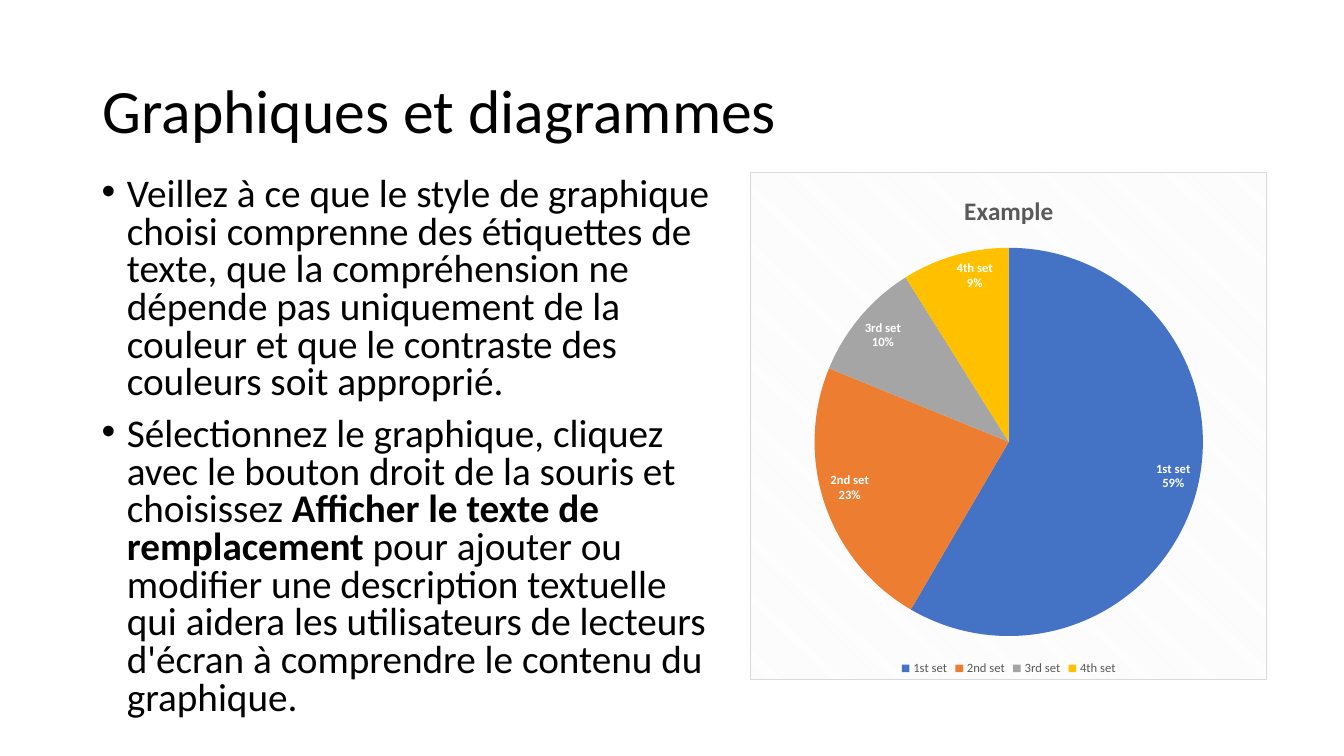
from dataclasses import dataclass

from lxml import etree
from pptx import Presentation
from pptx.chart.data import CategoryChartData
from pptx.dml.color import RGBColor
from pptx.enum.chart import XL_CHART_TYPE as ChartType
from pptx.enum.chart import XL_LABEL_POSITION as LabelPosition
from pptx.enum.chart import XL_LEGEND_POSITION as LegendPosition
from pptx.enum.text import MSO_ANCHOR as Anchor
from pptx.oxml import parse_xml
from pptx.oxml.ns import nsdecls, qn
from pptx.util import Inches, Pt


@dataclass(frozen=True)
class Theme:
    """Colours, typeface and type sizes of the slide."""

    font: str = "Calibri"
    text: str = "000000"
    muted: str = "595959"
    light: str = "FFFFFF"
    hatch: str = "F2F2F2"
    border: str = "D9D9D9"
    slices: tuple = ("4472C4", "ED7D31", "A5A5A5", "FFC000")
    title_size: int = 44
    body_size: int = 28
    chart_title_size: int = 18
    chart_size: int = 10
    label_size: int = 9


THEME = Theme()

TITLE = "Graphiques et diagrammes"
ADVICE = [
    [
        ("Veillez à ce que le style de graphique choisi comprenne des étiquettes "
         "de texte, que la compréhension ne dépende pas uniquement de la couleur "
         "et que le contraste des couleurs soit approprié.", False),
    ],
    [
        ("Sélectionnez le graphique, cliquez avec le bouton droit de la souris "
         "et choisissez ", False),
        ("Afficher le texte de remplacement ", True),
        ("pour ajouter ou modifier une description textuelle qui aidera les "
         "utilisateurs de lecteurs d'écran à comprendre le contenu du graphique.",
         False),
    ],
]
SHARES = {"1st set": 59, "2nd set": 23, "3rd set": 10, "4th set": 9}


def set_attributes(target, values):
    """Set each named attribute on the target."""
    for name, value in values.items():
        setattr(target, name, value)


def style_font(font, size, color, bold=False):
    """Apply the theme typeface with a size, colour and weight."""
    set_attributes(font, {"name": THEME.font, "size": Pt(size), "bold": bold})
    font.color.rgb = RGBColor.from_string(color)


def add_text(slide, box, paragraphs, size, anchor, paragraph_format, bulleted=False):
    """Add a wrapped text box made of paragraphs of (text, bold) runs."""
    frame = slide.shapes.add_textbox(*map(Inches, box)).text_frame
    set_attributes(frame, {"word_wrap": True, "vertical_anchor": anchor})
    for index, runs in enumerate(paragraphs):
        paragraph = frame.add_paragraph() if index else frame.paragraphs[0]
        set_attributes(paragraph, paragraph_format)
        if bulleted:
            add_bullet(paragraph)
        for text, bold in runs:
            run = paragraph.add_run()
            run.text = text
            style_font(run.font, size, THEME.text, bold)


def add_bullet(paragraph):
    """Give a paragraph a round bullet with a hanging indent."""
    properties = paragraph._p.get_or_add_pPr()
    properties.set("marL", str(Inches(0.25)))
    properties.set("indent", str(-Inches(0.25)))
    etree.SubElement(properties, qn("a:buFont")).set("typeface", "Arial")
    etree.SubElement(properties, qn("a:buChar")).set("char", "•")


def add_pie(slide, box, title, shares):
    """Add a titled pie chart with labelled slices and a legend."""
    data = CategoryChartData()
    data.categories = list(shares)
    data.add_series("Series 1", list(shares.values()))
    chart = slide.shapes.add_chart(ChartType.PIE, *map(Inches, box), data).chart
    style_font(chart.font, THEME.chart_size, THEME.text)
    set_attributes(chart, {"has_title": True, "has_legend": True})

    heading = chart.chart_title.text_frame
    heading.text = title
    style_font(heading.paragraphs[0].runs[0].font,
               THEME.chart_title_size, THEME.muted, True)

    set_attributes(chart.legend, {"position": LegendPosition.BOTTOM,
                                  "include_in_layout": False})
    style_font(chart.legend.font, THEME.label_size, THEME.muted)

    plot = chart.plots[0]
    plot.vary_by_categories = True
    for index, color in enumerate(THEME.slices):
        fill = plot.series[0].points[index].format.fill
        fill.solid()
        fill.fore_color.rgb = RGBColor.from_string(color)
    label_slices(plot.series[0].data_labels)
    hatch_chart_area(chart)


def label_slices(labels):
    """Show the category above its share inside the outer edge."""
    set_attributes(labels, {
        "show_category_name": True,
        "show_value": True,
        "show_percentage": False,
        "number_format": '0"%"',
        "number_format_is_linked": False,
        "position": LabelPosition.INSIDE_END,
    })
    style_font(labels.font, THEME.label_size, THEME.light, True)
    separator = etree.Element(qn("c:separator"))
    separator.text = "\n"
    labels._element.find(qn("c:showBubbleSize")).addnext(separator)


def hatch_chart_area(chart):
    """Fill the chart area with a diagonal pattern inside a thin border."""
    area = parse_xml(
        f'<c:spPr {nsdecls("c", "a")}><a:pattFill prst="dkDnDiag">'
        f'<a:fgClr><a:srgbClr val="{THEME.hatch}"/></a:fgClr>'
        f'<a:bgClr><a:srgbClr val="{THEME.light}"/></a:bgClr></a:pattFill>'
        f'<a:ln w="{Pt(0.75)}"><a:solidFill><a:srgbClr val="{THEME.border}"/>'
        f'</a:solidFill></a:ln></c:spPr>'
    )
    chart._chartSpace.find(qn("c:chart")).addnext(area)


def main():
    """Build the slide and save it."""
    presentation = Presentation()
    set_attributes(presentation, {"slide_width": Inches(13.33),
                                  "slide_height": Inches(7.5)})
    slide = presentation.slides.add_slide(presentation.slide_layouts[6])
    add_text(slide, (0.92, 0.4, 11.5, 1.45), [[(TITLE, False)]],
             THEME.title_size, Anchor.MIDDLE, {"line_spacing": 0.9})
    add_text(slide, (0.91, 1.71, 6.38, 5.78), ADVICE, THEME.body_size, Anchor.TOP,
             {"line_spacing": 0.8, "space_before": Pt(10)}, bulleted=True)
    add_pie(slide, (7.44, 1.71, 5.13, 5.04), "Example", SHARES)
    presentation.save("out.pptx")


if __name__ == "__main__":
    main()
